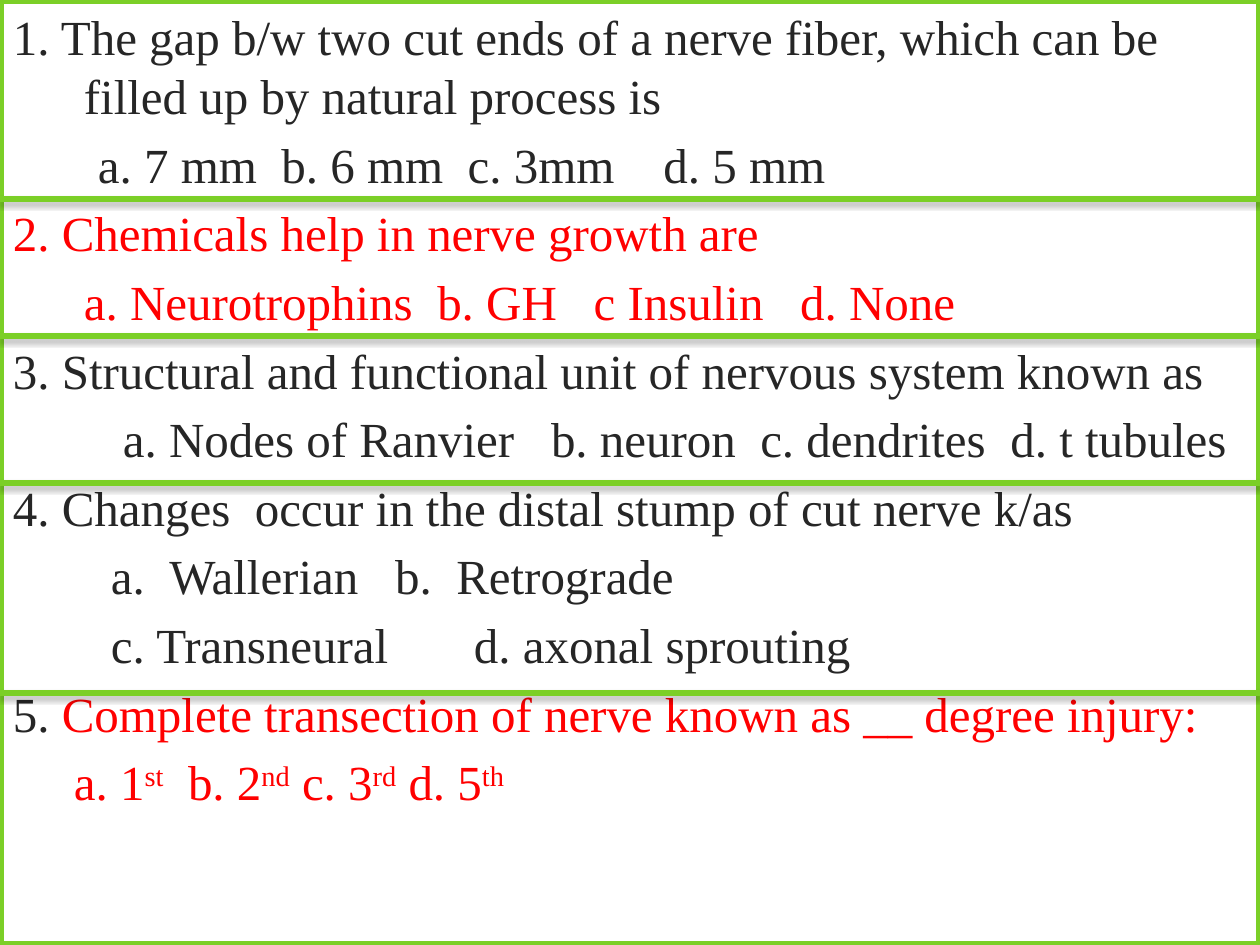
"""Build a quiz slide of five nerve physiology questions separated by ruled lines."""
from dataclasses import dataclass

from lxml import etree
from pptx import Presentation
from pptx.dml.color import RGBColor
from pptx.enum.shapes import MSO_CONNECTOR, MSO_SHAPE
from pptx.enum.text import MSO_ANCHOR, PP_ALIGN
from pptx.oxml.ns import qn
from pptx.util import Emu, Pt

RECTANGLE = MSO_SHAPE.RECTANGLE
STRAIGHT = MSO_CONNECTOR.STRAIGHT
TOP = MSO_ANCHOR.TOP
LEFT = PP_ALIGN.LEFT

WHITE = RGBColor(0xFF, 0xFF, 0xFF)
GREEN = RGBColor(0x7B, 0xCF, 0x27)
DARK = RGBColor(0x26, 0x26, 0x26)
RED = RGBColor(0xFF, 0x00, 0x00)

FONT = "Times New Roman"
FONT_SIZE = 28
SPACE_WIDTH = FONT_SIZE / 4
PX_PER_INCH = 126
SLIDE_WIDTH, SLIDE_HEIGHT = 1260, 945
SIDE_INSET, TOP_INSET = 13, 7
DIVIDER_TOPS = (199, 336, 483, 693)


@dataclass(frozen=True)
class Span:
    text: str
    color: RGBColor = DARK
    superscript: bool = False
    tracking: float = 0


@dataclass(frozen=True)
class QuizLine:
    spans: tuple[Span, ...]
    indent: int = 0
    margin: int = 0


def gap(width: int) -> Span:
    """Return one space stretched to the width of several."""
    return Span(" ", tracking=(width - 1) * SPACE_WIDTH)


def spaced(*parts: str | int, color: RGBColor = DARK) -> tuple[Span, ...]:
    """Return texts in one colour, with numbers between them as gap widths."""
    return tuple(gap(part) if isinstance(part, int) else Span(part, color) for part in parts)


def ordinal(lead: str, suffix: str) -> tuple[Span, Span]:
    """Return a red option number with its raised suffix."""
    return Span(lead, RED), Span(suffix, RED, True)


QUIZ_LINES = (
    QuizLine(spaced("1. The gap b/w two cut ends of a nerve fiber, which can be "
                    "filled up by natural process is"), -71, 71),
    QuizLine(spaced("a. 7 mm", 2, "b. 6 mm", 2, "c. 3mm", 4, "d. 5 mm"), 85),
    QuizLine(spaced("2. Chemicals help in nerve growth are", color=RED)),
    QuizLine(spaced("a. Neurotrophins", 2, "b. GH", 3, "c Insulin", 3, "d. None",
                    color=RED), 71),
    QuizLine(spaced("3. Structural and functional unit of nervous system known as")),
    QuizLine(spaced("a. Nodes of Ranvier", 3, "b. neuron", 2, "c. dendrites", 2,
                    "d. t tubules"), 110),
    QuizLine(spaced("4. Changes", 2, "occur in the distal stump of cut nerve k/as")),
    QuizLine(spaced("a.", 2, "Wallerian", 3, "b.", 2, "Retrograde"), 98),
    QuizLine(spaced("c. Transneural", 7, "d. axonal sprouting"), 98),
    QuizLine((Span("5. "),
              Span("Complete transection of nerve known as __ degree injury:", RED))),
    QuizLine((*ordinal("a. 1", "st"), gap(2), *ordinal("b. 2", "nd"),
              *ordinal(" c. 3", "rd"), *ordinal(" d. 5", "th")), 61),
)


def px(length: int) -> Emu:
    """Turn pixels into EMU."""
    return Emu(round(length * 914400 / PX_PER_INCH))


def add_span(paragraph, span: Span) -> None:
    """Add one formatted run."""
    run = paragraph.add_run()
    run.text = span.text
    run.font.name = FONT
    run.font.size = Pt(FONT_SIZE)
    run.font.color.rgb = span.color
    properties = run._r.get_or_add_rPr()
    if span.superscript:
        properties.set("baseline", "30000")
    if span.tracking:
        properties.set("spc", str(round(span.tracking * 100)))


def fill_line(paragraph, line: QuizLine, space_before: float) -> None:
    """Set the spacing, indents and runs of one paragraph."""
    paragraph.alignment = LEFT
    paragraph.line_spacing = Pt(33.6)
    paragraph.space_before = Pt(space_before)
    properties = paragraph._p.get_or_add_pPr()
    properties.set("marL", str(px(line.margin)))
    properties.set("indent", str(px(line.indent)))
    for span in line.spans:
        add_span(paragraph, span)


def add_quiz(slide, lines: tuple[QuizLine, ...]) -> None:
    """Draw the framed panel holding all the questions."""
    shape = slide.shapes.add_shape(RECTANGLE, 0, 0, px(SLIDE_WIDTH), px(SLIDE_HEIGHT))
    shape.shadow.inherit = False
    shape.fill.solid()
    shape.fill.fore_color.rgb = WHITE
    shape.line.color.rgb = GREEN
    shape.line.width = Pt(4.5)
    frame = shape.text_frame
    frame.word_wrap = True
    frame.vertical_anchor = TOP
    frame.margin_left = frame.margin_right = px(SIDE_INSET)
    frame.margin_top = px(TOP_INSET)
    for index, line in enumerate(lines):
        paragraph = frame.add_paragraph() if index else frame.paragraphs[0]
        fill_line(paragraph, line, 5.6 if index else 0)


def add_divider(slide, top: int) -> None:
    """Draw a full-width rule with a soft shadow below it."""
    connector = slide.shapes.add_connector(STRAIGHT, 0, px(top), px(SLIDE_WIDTH), px(top))
    connector.line.color.rgb = GREEN
    connector.line.width = Pt(3)
    effects = etree.SubElement(connector._element.spPr, qn("a:effectLst"))
    shadow = etree.SubElement(effects, qn("a:outerShdw"), blurRad=str(Pt(3.1)),
                              dist=str(Pt(1.8)), dir="5400000", rotWithShape="0")
    color = etree.SubElement(shadow, qn("a:srgbClr"), val="000000")
    etree.SubElement(color, qn("a:alpha"), val="35000")


def main() -> None:
    """Build and save the presentation."""
    presentation = Presentation()
    presentation.slide_width = px(SLIDE_WIDTH)
    presentation.slide_height = px(SLIDE_HEIGHT)
    slide = presentation.slides.add_slide(presentation.slide_layouts[6])
    add_quiz(slide, QUIZ_LINES)
    for top in DIVIDER_TOPS:
        add_divider(slide, top)
    presentation.save("out.pptx")


if __name__ == "__main__":
    main()
